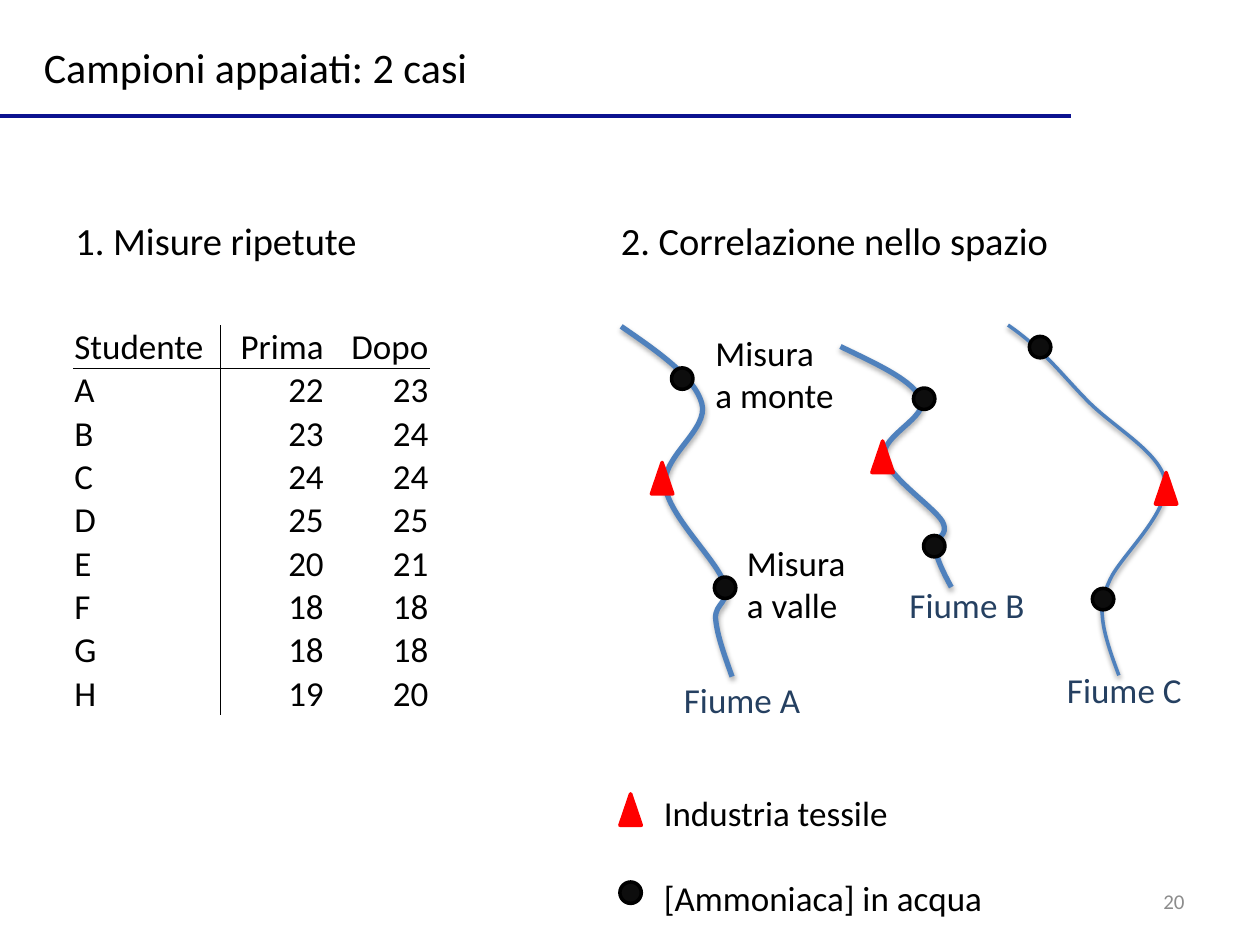
from lxml import etree
from pptx import Presentation
from pptx import util as u
from pptx.dml.color import RGBColor
from pptx.enum import shapes, text
from pptx.oxml.ns import qn

BLACK = RGBColor(0, 0, 0)
DOT = RGBColor(0x0D, 0x0D, 0x0D)
RED = RGBColor(0xFF, 0, 0)
NAVY = RGBColor(0x0C, 0x12, 0x90)
RIVER = RGBColor(0x4F, 0x81, 0xBD)
RIVER_NAME = RGBColor(0x25, 0x40, 0x61)
GREY = RGBColor(0x8C, 0x8C, 0x8C)

SCORES = [
    ("Studente", "Prima", "Dopo"),
    ("A", "22", "23"), ("B", "23", "24"), ("C", "24", "24"), ("D", "25", "25"),
    ("E", "20", "21"), ("F", "18", "18"), ("G", "18", "18"), ("H", "19", "20"),
]
RIVERS = [
    (3, 35, 1.8, [(4.93, 2.59), (5.22, 2.79), (5.51, 2.99), (5.57, 3.2),
                  (5.63, 3.41), (5.25, 3.62), (5.28, 3.86),
                  (5.31, 4.09), (5.67, 4.43), (5.74, 4.61),
                  (5.81, 4.79), (5.67, 4.78), (5.68, 4.91),
                  (5.69, 5.04), (5.75, 5.2), (5.81, 5.37)]),
    (3, 35, 1.8, [(6.67, 2.75), (6.96, 2.89), (7.25, 3.02), (7.31, 3.17),
                  (7.37, 3.31), (6.99, 3.46), (7.02, 3.62),
                  (7.04, 3.78), (7.41, 4.02), (7.48, 4.14),
                  (7.54, 4.26), (7.41, 4.26), (7.42, 4.34),
                  (7.43, 4.43), (7.49, 4.55), (7.55, 4.66)]),
    (2, 38, 1.6, [(8, 2.58), (8.29, 2.78), (8.43, 2.98), (8.64, 3.19),
                  (8.85, 3.4), (9.22, 3.6), (9.25, 3.83),
                  (9.28, 4.07), (8.89, 4.42), (8.81, 4.6),
                  (8.73, 4.78), (8.74, 4.78), (8.75, 4.9),
                  (8.76, 5.03), (8.82, 5.2), (8.88, 5.36)]),
]
FACTORIES = [(5.17, 3.67), (6.92, 3.5), (9.17, 3.75)]
SAMPLES = [(5.33, 2.92), (5.67, 4.58), (7.25, 3.08), (7.33, 4.25),
           (8.67, 4.67), (8.17, 2.67)]


class Board:
    font = "Calibri"

    def __init__(self, slide):
        self.slide = slide

    def style(self, frame, size, color, align=text.PP_ALIGN.LEFT):
        for paragraph in frame.paragraphs:
            paragraph.alignment = align
            for run in paragraph.runs:
                run.font.name = self.font
                run.font.size = u.Pt(size)
                run.font.color.rgb = color

    def label(self, words, left, top, width, height, size=20, color=BLACK):
        frame = self.slide.shapes.add_textbox(*map(u.Inches, (left, top, width, height))).text_frame
        frame.text = words
        frame.word_wrap = False
        frame.auto_size = text.MSO_AUTO_SIZE.SHAPE_TO_FIT_TEXT
        frame.vertical_anchor = text.MSO_ANCHOR.MIDDLE
        self.style(frame, size, color)
        return frame

    def page_number(self, number):
        frame = self.label(number, 7.17, 6.95, 2.33, 0.4)
        frame.word_wrap = True
        frame.auto_size = text.MSO_AUTO_SIZE.NONE
        self.style(frame, 12, GREY, text.PP_ALIGN.RIGHT)

    def rule(self, left, right, y):
        line = self.slide.shapes.add_connector(
            shapes.MSO_CONNECTOR.STRAIGHT, *map(u.Inches, (left, y, right, y)))
        line.line.color.rgb = NAVY
        line.line.width = u.Pt(2)
        etree.SubElement(line._element.spPr, qn("a:effectLst"))

    def marker(self, kind, left, top, height, fill, outline):
        mark = self.slide.shapes.add_shape(kind, *map(u.Inches, (left, top, 0.17, height)))
        mark.shadow.inherit = False
        mark.fill.solid()
        mark.fill.fore_color.rgb = fill
        mark.line.color.rgb = outline
        mark.line.width = u.Pt(2)

    def factory(self, left, top):
        self.marker(shapes.MSO_SHAPE.ISOSCELES_TRIANGLE, left, top, 0.25, RED, RED)

    def sample(self, left, top):
        self.marker(shapes.MSO_SHAPE.OVAL, left, top, 0.17, DOT, BLACK)

    def river(self, width, opacity, distance, controls):
        start, *rest = [(u.Inches(x), u.Inches(y)) for x, y in controls]
        builder = self.slide.shapes.build_freeform(*start)
        builder.add_line_segments(rest, close=False)
        course = builder.convert_to_shape()
        self.bend(course)
        course.fill.background()
        course.line.color.rgb = RIVER
        course.line.width = u.Pt(width)
        course.shadow.inherit = False
        effects = course._element.spPr.find(qn("a:effectLst"))
        shadow = etree.SubElement(effects, qn("a:outerShdw"), blurRad=str(u.Pt(3.1)),
                                  dist=str(u.Pt(distance)), dir="5400000", rotWithShape="0")
        black = etree.SubElement(shadow, qn("a:srgbClr"), val="000000")
        etree.SubElement(black, qn("a:alpha"), val=str(opacity * 1000))

    def bend(self, course):
        outline = next(course._element.iter(qn("a:path")))
        segments = outline.findall(qn("a:lnTo"))
        for first in range(0, len(segments), 3):
            curve = etree.SubElement(outline, qn("a:cubicBezTo"))
            for segment in segments[first:first + 3]:
                curve.append(segment[0])
                outline.remove(segment)

    def borders(self, cell, visible):
        for side in "LRTB":
            line = etree.SubElement(cell._tc.get_or_add_tcPr(), qn("a:ln" + side),
                                    w=str(u.Pt(0.5)))
            if side in visible:
                fill = etree.SubElement(line, qn("a:solidFill"))
                etree.SubElement(fill, qn("a:srgbClr"), val=str(BLACK))
            else:
                etree.SubElement(line, qn("a:noFill"))

    def score_table(self, rows, left, top, widths, height, row_height):
        holder = self.slide.shapes.add_table(
            len(rows), len(widths), *map(u.Inches, (left, top, sum(widths), height)))
        table = holder.table
        table.first_row = table.horz_banding = False
        for column, width in zip(table.columns, widths):
            column.width = u.Inches(width)
        for table_row in table.rows:
            table_row.height = u.Inches(row_height)
        holder.height = u.Inches(height)
        for r, row in enumerate(rows):
            for c, value in enumerate(row):
                cell = table.cell(r, c)
                cell.text = value
                cell.vertical_anchor = text.MSO_ANCHOR.BOTTOM
                cell.margin_left = cell.margin_right = cell.margin_top = u.Inches(0.01)
                cell.margin_bottom = 0
                self.borders(cell, ("R", "L", "")[c] + {0: "B", 1: "T"}.get(r, ""))
                cell.fill.background()
                align = text.PP_ALIGN.RIGHT if c else text.PP_ALIGN.LEFT
                self.style(cell.text_frame, 20, BLACK, align)


def main():
    deck = Presentation()
    deck.slide_width, deck.slide_height = u.Inches(10), u.Inches(7.5)
    board = Board(deck.slides.add_slide(deck.slide_layouts[6]))

    board.page_number("20")
    board.rule(0, 8.5, 0.92)
    board.label("Campioni appaiati: 2 casi", 0.25, 0.28, 3.7, 0.5, 24)
    board.score_table(SCORES, 0.58, 2.58, (1.17, 0.83, 0.83), 3.08, 0.21)
    board.label("1. Misure ripetute", 0.5, 1.67, 2.46, 0.47, 22)
    board.label("2. Correlazione nello spazio", 4.83, 1.67, 3.63, 0.47, 22)

    for river in RIVERS:
        board.river(*river)
    for place in FACTORIES:
        board.factory(*place)
    for place in SAMPLES:
        board.sample(*place)

    board.factory(4.92, 6.3)
    board.label("Industria tessile", 5.17, 6.23, 2, 0.44)
    board.label("Misura\na valle", 5.83, 4.25, 0.99, 0.77)
    board.label("Misura\na monte", 5.58, 2.58, 1.15, 0.77)
    for name, left, top in (("A", 5.33, 5.33), ("B", 7.12, 4.58), ("C", 8.37, 5.25)):
        board.label(f"Fiume {name}", left, top, 1.13, 0.44, color=RIVER_NAME)
    board.sample(4.92, 7)
    board.label("[Ammoniaca] in acqua", 5.17, 6.9, 2.75, 0.44)

    deck.save("out.pptx")


if __name__ == "__main__":
    main()
